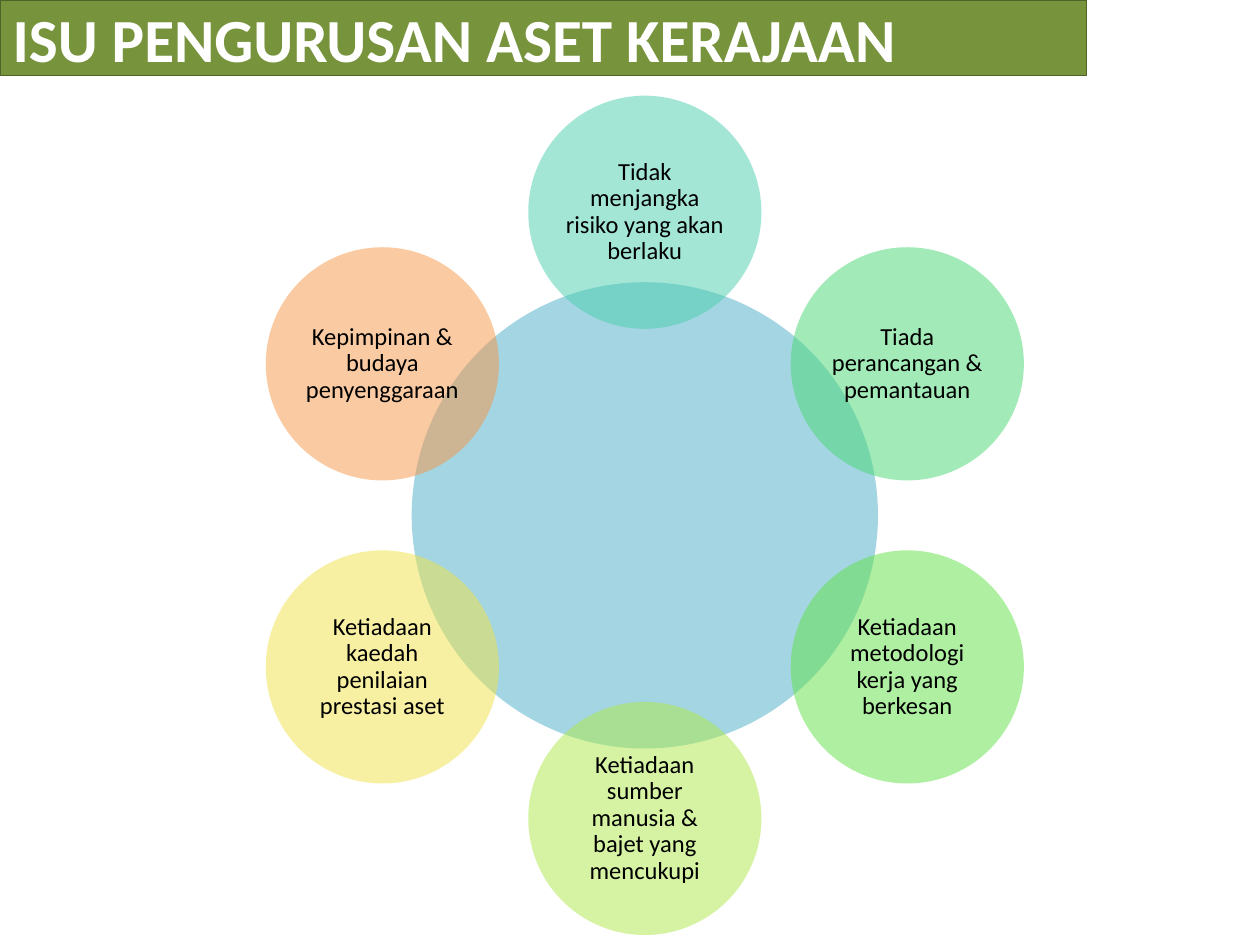
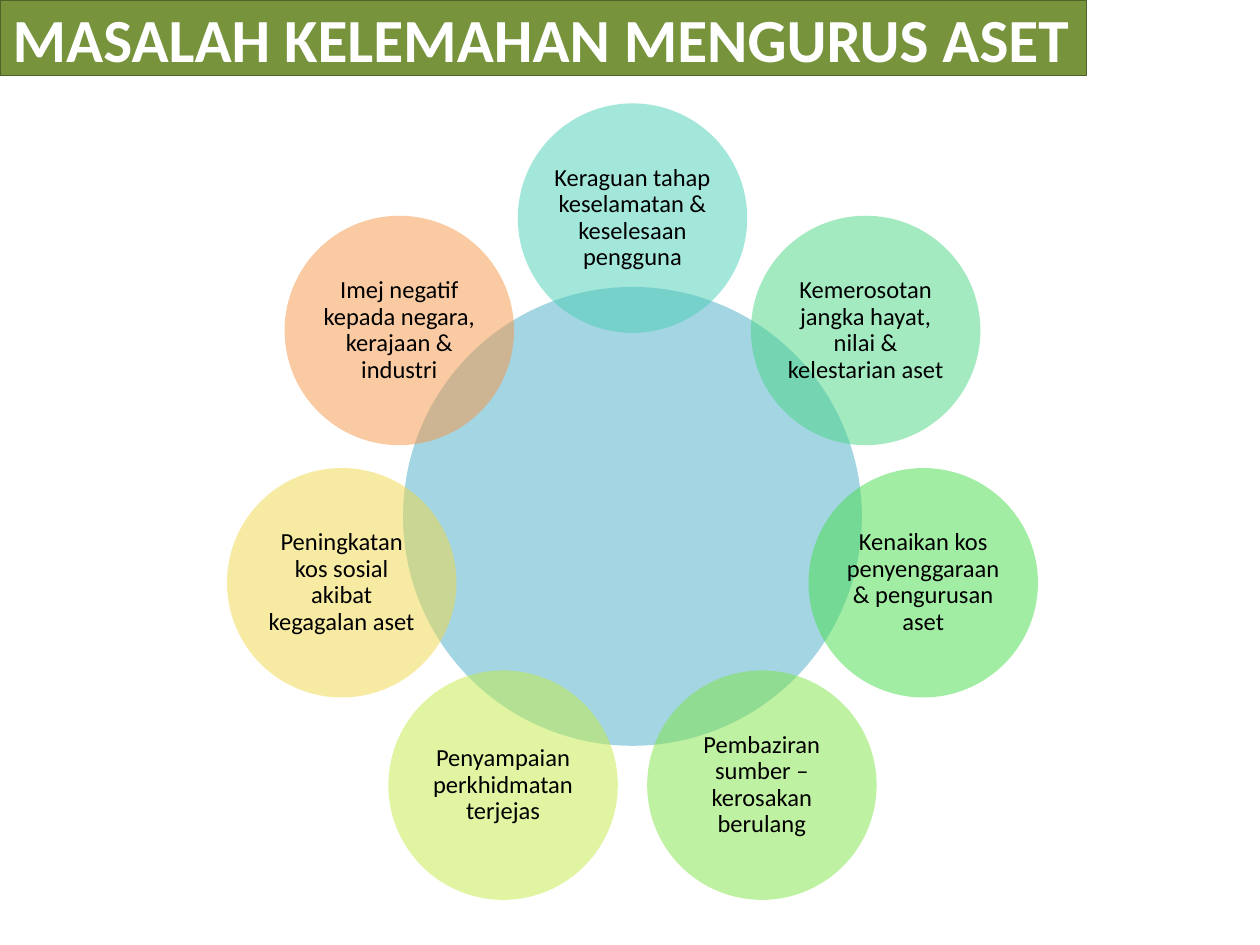
"""Build two slides of issue wheels: a hub ringed by overlapping petals."""
from dataclasses import dataclass
from math import cos, pi, sin

from lxml.etree import SubElement
from pptx import Presentation
from pptx.dml.color import RGBColor as Rgb
from pptx.enum.shapes import MSO_SHAPE as Kind
from pptx.enum.text import MSO_ANCHOR as Anchor, MSO_AUTO_SIZE as Fit, PP_ALIGN as Align
from pptx.oxml.ns import qn
from pptx.util import Cm, Pt

WHEELS = [
    {
        "title": "ISU PENGURUSAN ASET KERAJAAN",
        "center": (13, 10.39),
        "hub": 9.4,
        "petals": [
            ("Tidak menjangka risiko yang akan berlaku", "49CFAE"),
            ("Tiada perancangan & pemantauan", "47D872"),
            ("Ketiadaan metodologi kerja yang berkesan", "60E146"),
            ("Ketiadaan sumber manusia & bajet yang mencukupi", "ACE946"),
            ("Ketiadaan kaedah penilaian prestasi aset", "F0E146"),
            ("Kepimpinan & budaya penyenggaraan", "F79646"),
        ],
    },
    {
        "title": "MASALAH KELEMAHAN MENGURUS ASET",
        "center": (12.75, 10.41),
        "hub": 9.25,
        "petals": [
            ("Keraguan tahap keselamatan & keselesaan pengguna", "49CEB6"),
            ("Kemerosotan jangka hayat, nilai & kelestarian aset", "48D684"),
            ("Kenaikan kos penyenggaraan & pengurusan aset", "47DD4B"),
            ("Pembaziran sumber – kerosakan berulang", "80E446"),
            ("Penyampaian perkhidmatan terjejas", "C3EB46"),
            ("Peningkatan kos sosial akibat kegagalan aset", "F1D746"),
            ("Imej negatif kepada negara, kerajaan & industri", "F79646"),
        ],
    },
]


@dataclass(frozen=True)
class Theme:
    """Colours, type sizes and wheel ratios."""
    font: str = "Calibri"
    band: str = "77933C"
    edge: str = "4F6228"
    hub: str = "4BACC6"
    light: str = "FFFFFF"
    dark: str = "000000"
    head: float = 35
    body: float = 14
    alpha: int = 50
    petal: float = 0.5
    orbit: float = 0.65


THEME = Theme()


def write(shape, text, size, color, bold=False, align=Align.CENTER, inset=None, lines=1.0):
    """Put one formatted paragraph into a shape."""
    frame = shape.text_frame
    frame.text = text
    frame.word_wrap = True
    frame.auto_size = Fit.NONE
    frame.vertical_anchor = Anchor.MIDDLE
    if inset is not None:
        frame.margin_left = frame.margin_right = Cm(inset)
        frame.margin_top = frame.margin_bottom = Cm(inset)
    para = frame.paragraphs[0]
    para.alignment = align
    para.line_spacing = lines
    font = para.runs[0].font
    font.name, font.size, font.bold = THEME.font, Pt(size), bold
    font.color.rgb = Rgb.from_string(color)


def paint(shape, color):
    """Fill a shape with a solid colour."""
    shape.fill.solid()
    shape.fill.fore_color.rgb = Rgb.from_string(color)


def disc(slide, x, y, size, color):
    """Draw a see-through circle around a centre."""
    shape = slide.shapes.add_shape(
        Kind.OVAL, Cm(x - size / 2), Cm(y - size / 2), Cm(size), Cm(size))
    shape.shadow.inherit = False
    paint(shape, color)
    shape.line.fill.background()
    tint = shape.fill._xPr.find(qn("a:solidFill"))[0]
    SubElement(tint, qn("a:alpha"), val=str(THEME.alpha * 1000))
    return shape


def banner(slide, text):
    """Turn the title placeholder into the green band."""
    title = slide.shapes.title
    title.left, title.top, title.width, title.height = Cm(0), Cm(0), Cm(21.9), Cm(1.52)
    paint(title, THEME.band)
    title.line.color.rgb = Rgb.from_string(THEME.edge)
    title.line.width = Pt(0.75)
    write(title, text, THEME.head, THEME.light, bold=True, align=Align.LEFT)


def wheel(slide, center, hub, petals):
    """Draw the hub and set the petals clockwise from the top."""
    x, y = center
    disc(slide, x, y, hub, THEME.hub)
    reach = hub * THEME.orbit
    for i, (text, color) in enumerate(petals):
        turn = 2 * pi * i / len(petals)
        petal = disc(slide, x + reach * sin(turn), y - reach * cos(turn),
                     hub * THEME.petal, color)
        write(petal, text, THEME.body, THEME.dark, inset=0.05, lines=0.9)


def main():
    """Build and save the deck."""
    deck = Presentation()
    deck.slide_width, deck.slide_height = Cm(25.4), Cm(19.05)
    for item in WHEELS:
        slide = deck.slides.add_slide(deck.slide_layouts[5])
        banner(slide, item["title"])
        wheel(slide, item["center"], item["hub"], item["petals"])
    deck.save("out.pptx")


if __name__ == "__main__":
    main()
